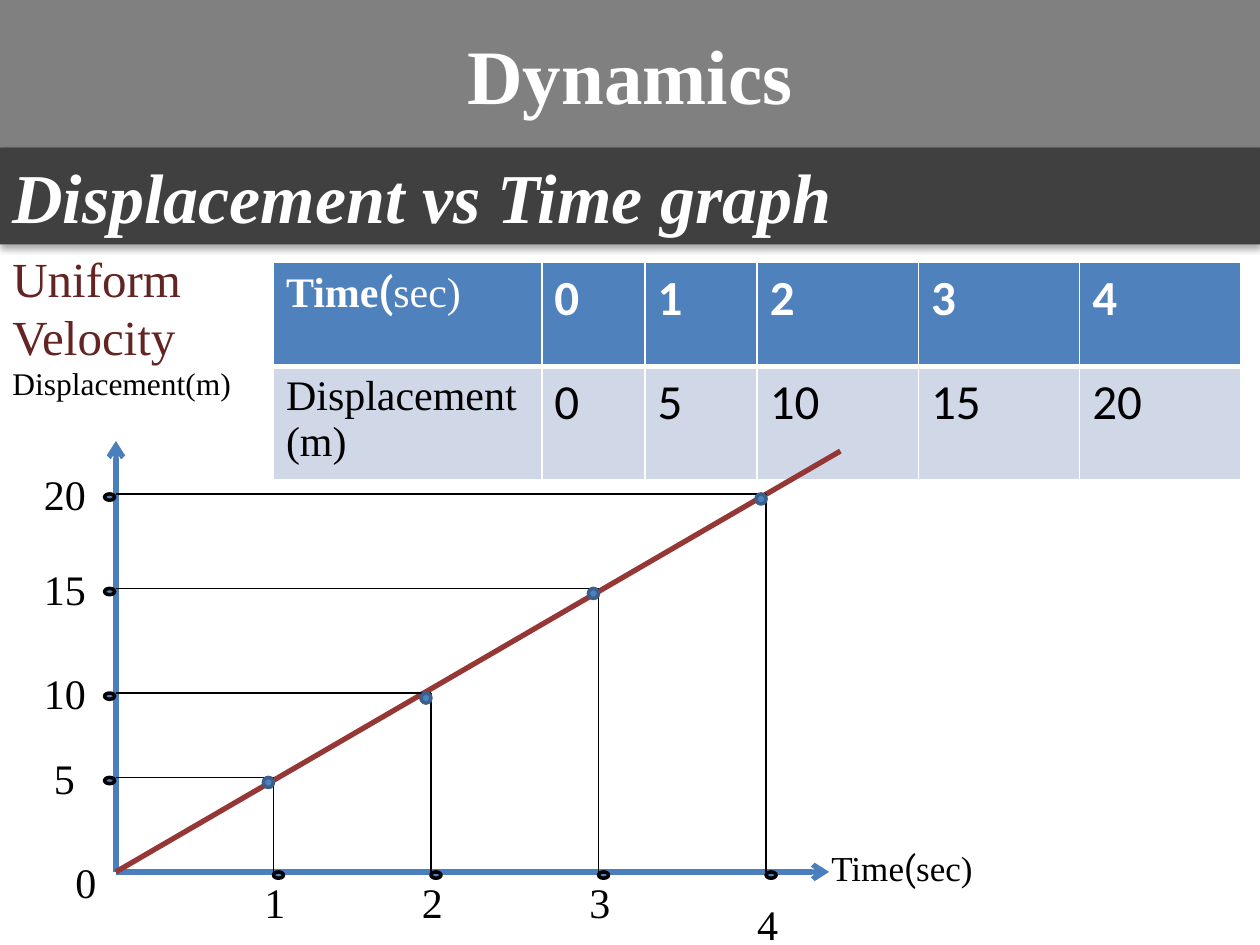
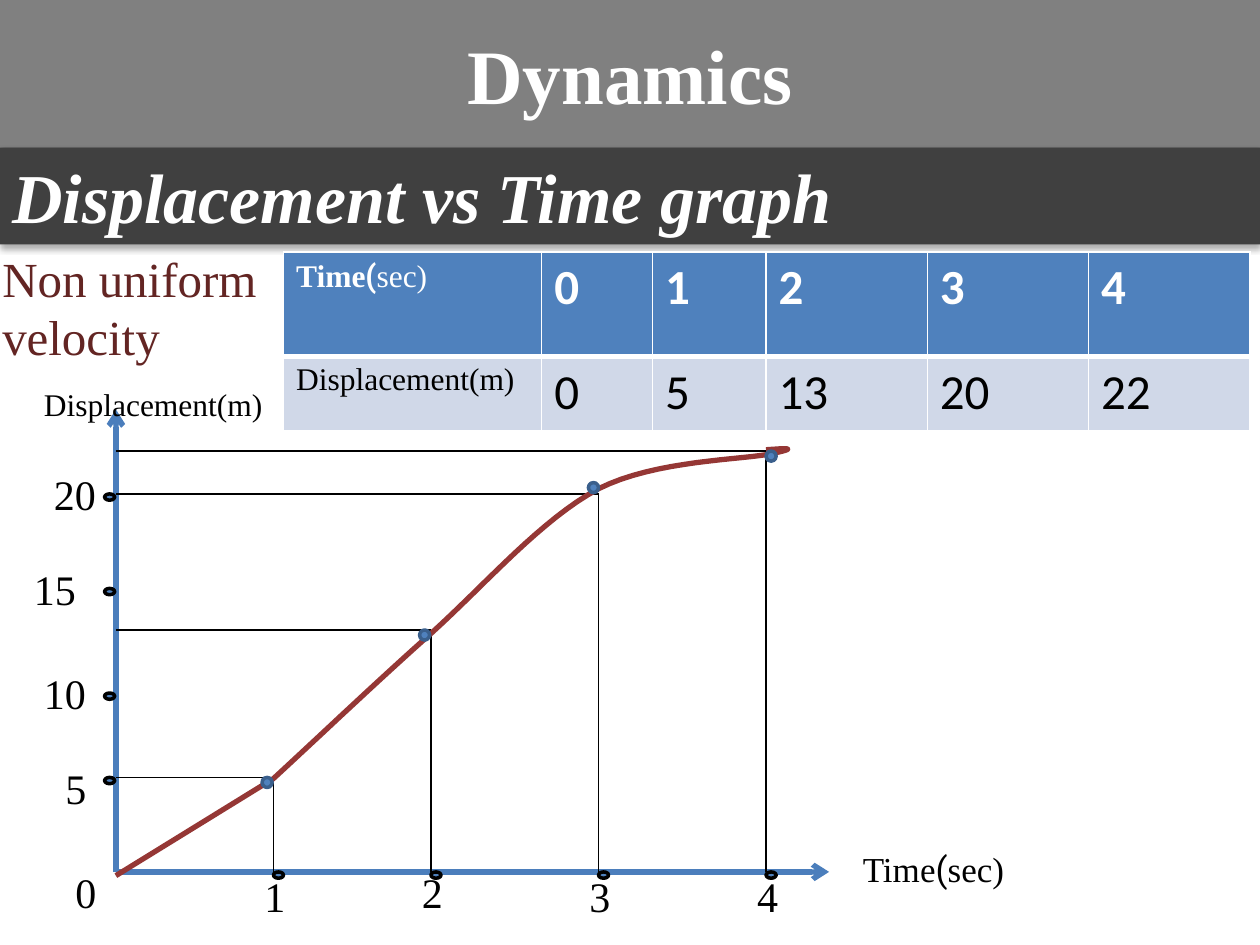
from lxml import etree
from pptx import Presentation
from pptx.dml.color import RGBColor
from pptx.enum import shapes, text
from pptx.oxml import parse_xml
from pptx.oxml.ns import nsdecls, qn
from pptx.util import Inches, Pt

SERIF, SANS, PAREN = "Times New Roman", "Calibri", "Roboto"
WHITE, BLACK, GRAY, DARK = "FFFFFF", "000000", "808080", "404040"
BLUE, PALE, AXIS, RIM = "4F81BD", "D0D8E8", "4B7EBC", "3A5F8C"
MAROON, CURVE = "632523", "953735"

LEFT, BASE = 0.92, 6.92          # where the axes meet
TIMES = [2.17, 3.42, 4.75, 6.08]  # 1 to 4 seconds
MARKS = [6.17, 5.5, 4.67, 3.92]   # 5 to 20 metres
DOT = 0.08


def color(value):
    return RGBColor.from_string(value)


def box(*sizes):
    return [Inches(size) for size in sizes]


def style(font, size, ink, face=SERIF, bold=False, italic=False):
    font.name, font.size = face, Pt(size)
    font.bold, font.italic = bold, italic
    font.color.rgb = color(ink)


def time_label(para, size, ink, bold=False):
    """Write Time(sec), with its bracket in another font."""
    for words, face, heavy in (("Time", SERIF, bold), ("(", PAREN, bold),
                               ("sec)", SERIF, False)):
        run = para.add_run()
        run.text = words
        style(run.font, size, ink, face, heavy)


def shade(shape):
    """Give a band its soft shadow."""
    shape.shadow.inherit = False
    effects = shape._element.spPr.find(qn("a:effectLst"))
    effects.append(parse_xml(
        f'<a:outerShdw {nsdecls("a")} blurRad="{Pt(3.5)}" dist="{Pt(2.2)}" '
        'dir="5400000" rotWithShape="0"><a:srgbClr val="000000">'
        '<a:alpha val="32000"/></a:srgbClr></a:outerShdw>'))


def band(shape, words, fill, size, align, italic=False):
    shape.fill.solid()
    shape.fill.fore_color.rgb = color(fill)
    shape.line.fill.background()
    shade(shape)
    frame = shape.text_frame
    frame.word_wrap = True
    frame.vertical_anchor = text.MSO_ANCHOR.MIDDLE
    frame.text = words
    para = frame.paragraphs[0]
    para.alignment = align
    style(para.font, size, WHITE, bold=True, italic=italic)


def header(slide):
    title = slide.shapes.title
    title.left, title.top, title.width, title.height = box(0, 0, 10, 1.17)
    band(title, "Dynamics", GRAY, 44, text.PP_ALIGN.CENTER)
    strip = slide.shapes.add_shape(shapes.MSO_SHAPE.RECTANGLE,
                                   *box(0, 1.17, 10, 0.77))
    band(strip, "Displacement vs Time graph", DARK, 40,
         text.PP_ALIGN.LEFT, italic=True)


def label(slide, place, words="", size=24, ink=BLACK):
    frame = slide.shapes.add_textbox(*box(*place)).text_frame
    frame.word_wrap = True
    frame.auto_size = text.MSO_AUTO_SIZE.SHAPE_TO_FIT_TEXT
    para = frame.paragraphs[0]
    if words:
        para.text = words
        style(para.font, size, ink)
    return para


def line(slide, start, end, ink=BLACK, width=0.75, arrow=False):
    link = slide.shapes.add_connector(shapes.MSO_CONNECTOR.STRAIGHT,
                                      *box(*start, *end))
    link.line.color.rgb = color(ink)
    link.line.width = Pt(width)
    etree.SubElement(link._element.spPr, qn("a:effectLst"))
    if arrow:
        stroke = link.line._get_or_add_ln()
        etree.SubElement(stroke, qn("a:tailEnd"), type="arrow")


def dot(slide, left, top, height, rim):
    oval = slide.shapes.add_shape(shapes.MSO_SHAPE.OVAL,
                                  *box(left, top, DOT, height))
    oval.shadow.inherit = False
    oval.fill.solid()
    oval.fill.fore_color.rgb = color(BLUE)
    oval.line.color.rgb = color(rim)
    oval.line.width = Pt(2)


def bezier(points, steps=16):
    """List points along a chain of cubic curves."""
    track = []
    for i in range(0, len(points) - 1, 3):
        a, b, c, d = points[i:i + 4]
        for step in range(1, steps + 1):
            t = step / steps
            s = 1 - t
            track.append(tuple(
                s**3 * p + 3 * s * s * t * q + 3 * s * t * t * r + t**3 * e
                for p, q, r, e in zip(a, b, c, d)))
    return track


def curve(slide, points):
    first, *rest = [box(*point) for point in points]
    pen = slide.shapes.build_freeform(*first)
    pen.add_line_segments(rest, close=False)
    path = pen.convert_to_shape()
    path.shadow.inherit = False
    path.fill.background()
    path.line.color.rgb = color(CURVE)
    path.line.width = Pt(3)


def border(cell, head):
    """Draw white cell edges, thick between head and body."""
    props = cell._tc.get_or_add_tcPr()
    widths = {"L": 1, "R": 1, "T": 1 if head else 3, "B": 3 if head else 1}
    for i, (side, width) in enumerate(widths.items()):
        props.insert(i, parse_xml(
            f'<a:ln{side} {nsdecls("a")} w="{Pt(width)}"><a:solidFill>'
            f'<a:srgbClr val="{WHITE}"/></a:solidFill></a:ln{side}>'))


def table(slide, place, cols, rows, values, size):
    grid = slide.shapes.add_table(2, len(cols), *box(
        *place, sum(cols), sum(rows))).table
    for col, width in zip(grid.columns, cols):
        col.width = Inches(width)
    for row, height in zip(grid.rows, rows):
        row.height = Inches(height)
    for r, items in enumerate([range(5), values]):
        head = r == 0
        ink = WHITE if head else BLACK
        for c, item in enumerate(["", *items]):
            cell = grid.cell(r, c)
            cell.fill.solid()
            cell.fill.fore_color.rgb = color(BLUE if head else PALE)
            border(cell, head)
            para = cell.text_frame.paragraphs[0]
            if c:
                para.text = str(item)
                style(para.font, 28, ink, SANS, head)
            elif head:
                time_label(para, size, ink, bold=True)
            else:
                para.text = "Displacement(m)"
                style(para.font, size, ink)


def axes(slide, top, time_at, shift_at):
    origin = (LEFT, BASE)
    line(slide, origin, (LEFT, top), AXIS, 3, arrow=True)
    line(slide, origin, (6.58, BASE), AXIS, 3, arrow=True)
    time_label(label(slide, (*time_at, 2.6, 0.44)), 20, BLACK)
    label(slide, (*shift_at, 1.98, 0.4), "Displacement(m)", 18)


def scale(slide, zero, tops, spots):
    """Number both axes: tops for the times, spots for the distances."""
    label(slide, (0.5, zero, 0.42, 0.5), "0")
    for i, (x, top, spot) in enumerate(zip(TIMES, tops, spots), 1):
        label(slide, (x - 0.17, top, 0.42, 0.5), str(i))
        label(slide, (*spot, 0.58, 0.5), str(5 * i))


def guides(slide, levels):
    for x, y in zip(TIMES, levels):
        line(slide, (LEFT, y), (x, y))
        line(slide, (x, BASE), (x, y))


def dots(slide, spots):
    for x, y in zip(TIMES, MARKS):
        dot(slide, 0.83, y, 0.05, BLACK)
        dot(slide, x, BASE, 0.05, BLACK)
    for x, y in spots:
        dot(slide, x, y, DOT, RIM)


def uniform(slide):
    header(slide)
    table(slide, (2.17, 2.08), [2.13, 0.82, 0.89] + [1.28] * 3,
          [0.83, 0.9], [0, 5, 10, 15, 20], 24)
    label(slide, (0, 1.92, 2.25, 1.04), "Uniform Velocity", 28, MAROON)
    axes(slide, 3.5, (6.5, 6.67), (0, 2.84))
    scale(slide, 6.75, [6.91] * 3 + [7.08],
          [(0.33, 5.92), (0.25, 5.25), (0.25, 4.42), (0.25, 3.67)])
    line(slide, (LEFT, BASE), (6.67, 3.58), CURVE, 3)
    guides(slide, MARKS)
    dots(slide, [(x - DOT, y) for x, y in zip(TIMES, MARKS)])


def varied(slide):
    header(slide)
    label(slide, (-0.08, 1.92, 2.33, 1.04), "Non uniform velocity", 28, MAROON)
    table(slide, (2.25, 2), [2.05, 0.88, 0.9] + [1.28] * 3,
          [0.83, 0.59], [0, 5, 13, 20, 22], 18)
    axes(slide, 3.25, (6.75, 6.68), (0.25, 3.01))
    scale(slide, 6.83, [6.86, 6.83, 6.86, 6.86],
          [(0.42, 6), (0.25, 5.25), (0.17, 4.42), (0.33, 3.67)])
    guides(slide, [6.17, 5, 3.92, 3.58])
    bend = [(2.17, 6.18), (2.38, 5.99), (3, 5.4), (3.43, 5.02),
            (3.86, 4.63), (4.3, 4.12), (4.75, 3.88),
            (5.2, 3.65), (5.91, 3.65), (6.13, 3.6),
            (6.36, 3.55), (6.22, 3.56), (6.08, 3.57)]
    curve(slide, [(LEFT, 6.95), bend[0], *bezier(bend)])
    dots(slide, [(2.08, 6.17), (3.33, 5), (4.67, 3.83), (6.08, 3.58)])


def main():
    deck = Presentation()
    deck.slide_width, deck.slide_height = box(10, 7.5)
    for build in (uniform, varied):
        build(deck.slides.add_slide(deck.slide_layouts[5]))
    deck.save("out.pptx")


if __name__ == "__main__":
    main()
